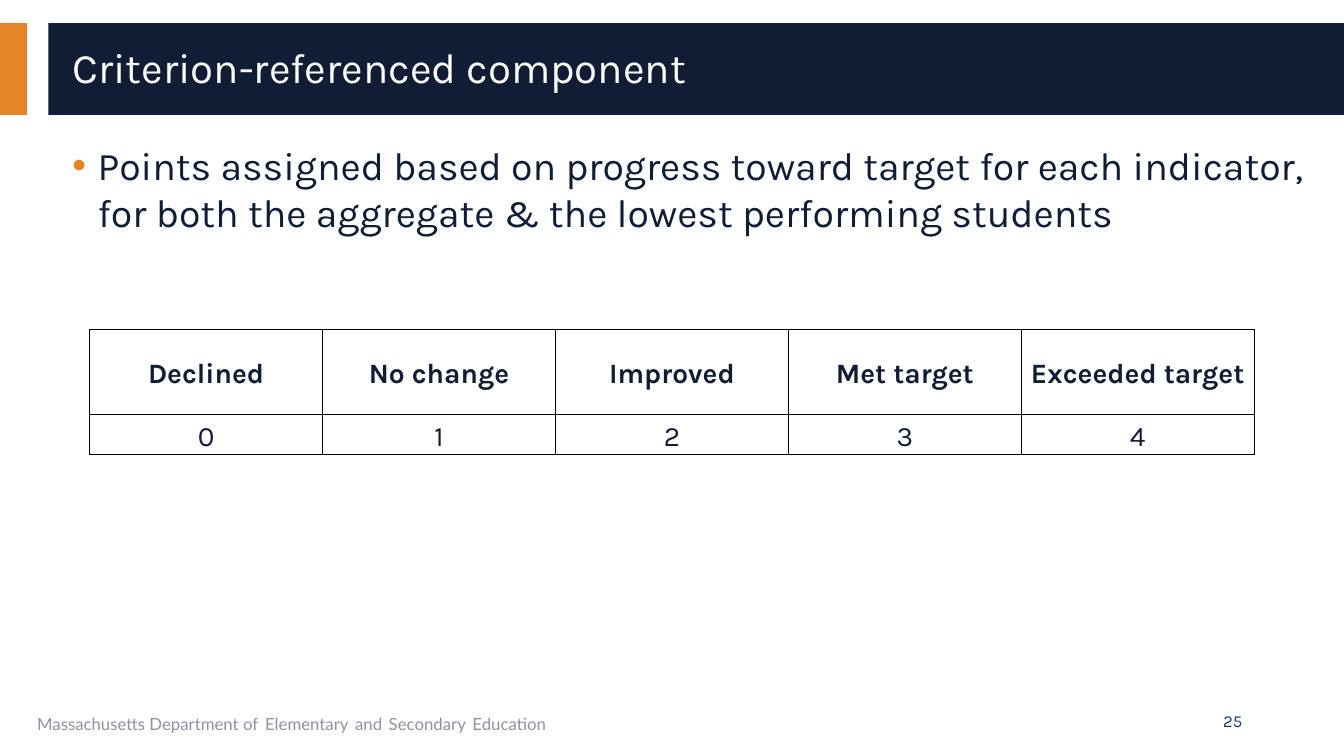
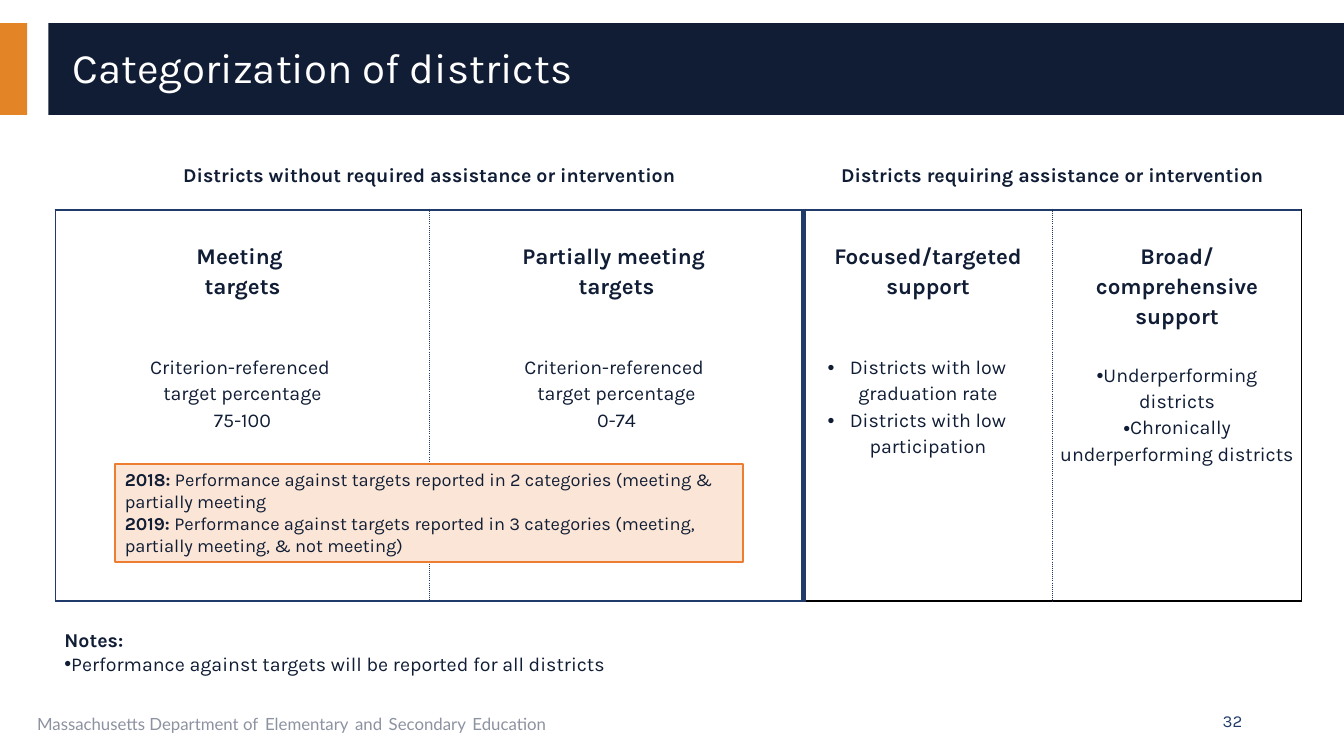
from lxml.etree import SubElement
from pptx import Presentation
from pptx.dml.color import RGBColor
from pptx.enum.shapes import MSO_SHAPE as Shape
from pptx.enum.text import MSO_ANCHOR as Anchor, MSO_AUTO_SIZE as AutoSize, PP_ALIGN as Align
from pptx.oxml.ns import qn
from pptx.util import Inches, Pt

COLORS = {
    "navy": "101D35",
    "blue": "203B6A",
    "orange": "E38526",
    "gray": "8D92A1",
    "white": "FFFFFF",
    "black": "000000",
    "peach": "FBE5D6",
    "callout_line": "ED7D31",
}
FONT = "Karla"
NO_STYLE = "{2D5ABB26-0587-4C30-8999-92F81FD0307C}"


def write(text_frame, paragraphs, size, color="navy", align=Align.LEFT, line_spacing=1.0):
    text_frame.word_wrap = True
    for index, item in enumerate(paragraphs):
        paragraph = text_frame.add_paragraph() if index else text_frame.paragraphs[0]
        properties = paragraph._p.get_or_add_pPr()
        if "bullet" in item:
            hanging = Inches(item.get("hanging", 0))
            properties.set("marL", str(hanging))
            properties.set("marR", str(Inches(item.get("right", 0))))
            properties.set("indent", str(-hanging))
            bullet_color = SubElement(properties, qn("a:buClr"))
            SubElement(bullet_color, qn("a:srgbClr"), val=COLORS[item["bullet"]])
            SubElement(properties, qn("a:buFont"), typeface="Arial")
            SubElement(properties, qn("a:buChar"), char="•")
        paragraph.alignment = align
        paragraph.line_spacing = line_spacing
        if "before" in item:
            paragraph.space_before = Pt(item["before"])
        for text, bold in item["runs"]:
            run = paragraph.add_run()
            run.text = text
            run.font.name = FONT
            run.font.size = Pt(item.get("size", size))
            run.font.bold = bold
            run.font.color.rgb = RGBColor.from_string(COLORS[color])


def format_cell(cell, borders, anchor, margin_top=0):
    cell.margin_left = cell.margin_right = Inches(0.07)
    cell.margin_top, cell.margin_bottom = Inches(margin_top), 0
    cell.vertical_anchor = anchor
    properties = cell._tc.get_or_add_tcPr()
    for side in "LRTB":
        if side in borders:
            color, width, dash = borders[side]
            line = SubElement(properties, qn("a:ln" + side), w=str(Pt(width)))
            fill = SubElement(line, qn("a:solidFill"))
            SubElement(fill, qn("a:srgbClr"), val=COLORS[color])
            SubElement(line, qn("a:prstDash"), val=dash)
    cell.fill.background()


presentation = Presentation()
presentation.slide_width = Inches(13.33)
presentation.slide_height = Inches(7.5)
title_only = presentation.slide_layouts[5]

slides = []
for title_text, number in [("Criterion-referenced component", "25"), ("Categorization of districts", "32")]:
    slide = presentation.slides.add_slide(title_only)
    slides.append(slide)
    for left, width, color in [(0, 0.27, "orange"), (0.48, 12.85, "navy")]:
        band = slide.shapes.add_shape(Shape.RECTANGLE, Inches(left), Inches(0.23), Inches(width), Inches(0.91))
        band.shadow.inherit = False
        band.fill.solid()
        band.fill.fore_color.rgb = RGBColor.from_string(COLORS[color])
        band.line.fill.background()

    title = slide.shapes.title
    title.element.getparent().append(title.element)
    title.left, title.top, title.width, title.height = Inches(0.62), Inches(0.32), Inches(12.44), Inches(0.74)
    title.text_frame.auto_size = AutoSize.NONE
    title.text_frame.vertical_anchor = Anchor.MIDDLE
    write(title.text_frame, [{"runs": [(title_text, False)]}], 30, "white", line_spacing=0.9)

    footer = slide.shapes.add_textbox(Inches(0.27), Inches(6.95), Inches(8.44), Inches(0.4))
    footer.text_frame.word_wrap = True
    paragraph = footer.text_frame.paragraphs[0]
    for text in ["Massachusetts Department of", " ", "Elementary", " ", "and", " ", "Secondary", " ", "Education"]:
        run = paragraph.add_run()
        run.text = text
        run.font.name = "Lato"
        run.font.size = Pt(18 if text == " " else 12)
        run.font.color.rgb = RGBColor.from_string(COLORS["gray"])

    page_number = slide.shapes.add_textbox(Inches(9.42), Inches(6.95), Inches(3), Inches(0.4))
    page_number.text_frame.vertical_anchor = Anchor.MIDDLE
    write(page_number.text_frame, [{"runs": [(number, False)]}], 12, "blue", Align.RIGHT)

component_slide, district_slide = slides

body = component_slide.shapes.add_textbox(Inches(0.62), Inches(1.35), Inches(12.44), Inches(1.2))
body_text = (
    "Points assigned based on progress toward target for each indicator, "
    "for both the aggregate & the lowest performing students"
)
write(body.text_frame, [{"runs": [(body_text, False)], "bullet": "orange", "hanging": 0.25}], 28)

tables = []
for slide, left, top, widths, heights in [
    (component_slide, 0.89, 3.27, [2.31] * 5, [0.84, 0.4]),
    (district_slide, 0.55, 1.38, [3.71, 3.71, 2.47, 2.47], [0.7, 3.88]),
]:
    frame = slide.shapes.add_table(
        len(heights), len(widths), Inches(left), Inches(top), Inches(sum(widths)), Inches(sum(heights))
    )
    table = frame.table
    table.first_row = table.horz_banding = False
    table._tbl.tblPr.find(qn("a:tableStyleId")).text = NO_STYLE
    for column, width in zip(table.columns, widths):
        column.width = Inches(width)
    for row, height in zip(table.rows, heights):
        row.height = Inches(height)
    tables.append(table)

points_table, district_table = tables

points = ["Declined", "No change", "Improved", "Met target", "Exceeded target"]
grid_line = ("black", 1, "solid")
for column, label in enumerate(points):
    for row, text in enumerate([label, str(column)]):
        cell = points_table.cell(row, column)
        format_cell(cell, dict.fromkeys("LRTB", grid_line), Anchor.MIDDLE)
        write(cell.text_frame, [{"runs": [(text, row == 0)]}], 20, align=Align.CENTER, line_spacing=1.15)

outline = ("blue", 1.5, "solid")
black_outline = ("black", 1.5, "solid")
divider = ("blue", 4.5, "solid")
dotted = ("blue", 1, "sysDot")

for column in range(4):
    format_cell(district_table.cell(0, column), {"B": outline}, Anchor.MIDDLE)
for column, text in [
    (0, "Districts without required assistance or intervention"),
    (2, "Districts requiring assistance or intervention"),
]:
    cell = district_table.cell(0, column)
    cell.merge(district_table.cell(0, column + 1))
    write(cell.text_frame, [{"runs": [(text, True)]}], 14, align=Align.CENTER, line_spacing=1.15)

target_lines = ["Criterion-referenced ", "target percentage"]
categories = [
    (["Meeting ", "targets"], target_lines + ["75-100"], 38, {}, outline, dotted, outline),
    (["Partially meeting ", "targets"], target_lines + ["0-74"], 38, {}, dotted, divider, outline),
    (
        ["Focused/targeted support"],
        ["Districts with low graduation rate", "Districts with low participation"],
        38, {"bullet": "navy", "hanging": 0.22, "right": 0.22}, divider, dotted, black_outline,
    ),
    (
        ["Broad/", "comprehensive support"],
        ["Underperforming districts", "Chronically underperforming districts"],
        22, {"bullet": "navy"}, dotted, black_outline, black_outline,
    ),
]
for column, (headings, details, gap, bullet, left_line, right_line, bottom_line) in enumerate(categories):
    cell = district_table.cell(1, column)
    borders = {"L": left_line, "R": right_line, "T": outline, "B": bottom_line}
    format_cell(cell, borders, Anchor.TOP, 0.3)
    paragraphs = [{"runs": [(text, True)], "size": 16} for text in headings]
    paragraphs += [{"runs": [(text, False)], **bullet} for text in details]
    paragraphs[len(headings)]["before"] = gap
    write(cell.text_frame, paragraphs, 14, align=Align.CENTER, line_spacing=1.15)

notes = district_slide.shapes.add_textbox(Inches(0.54), Inches(6.18), Inches(12.38), Inches(0.57))
notes.text_frame.vertical_anchor = Anchor.MIDDLE
write(
    notes.text_frame,
    [
        {"runs": [("Notes:", True)]},
        {"runs": [("Performance against targets will be reported for all districts", False)], "bullet": "navy"},
    ],
    14,
)

callout = district_slide.shapes.add_shape(Shape.RECTANGLE, Inches(1.14), Inches(4.6), Inches(6.23), Inches(0.98))
callout.shadow.inherit = False
callout.fill.solid()
callout.fill.fore_color.rgb = RGBColor.from_string(COLORS["peach"])
callout.line.color.rgb = RGBColor.from_string(COLORS["callout_line"])
callout.line.width = Pt(1.5)
callout.text_frame.vertical_anchor = Anchor.TOP
reports = [
    ("2018: ", "2 categories (meeting & partially meeting"),
    ("2019: ", "3 categories (meeting, partially meeting, & not meeting)"),
]
write(
    callout.text_frame,
    [{"runs": [(year, True), ("Performance against targets reported in " + text, False)]} for year, text in reports],
    13,
)

presentation.save("out.pptx")
